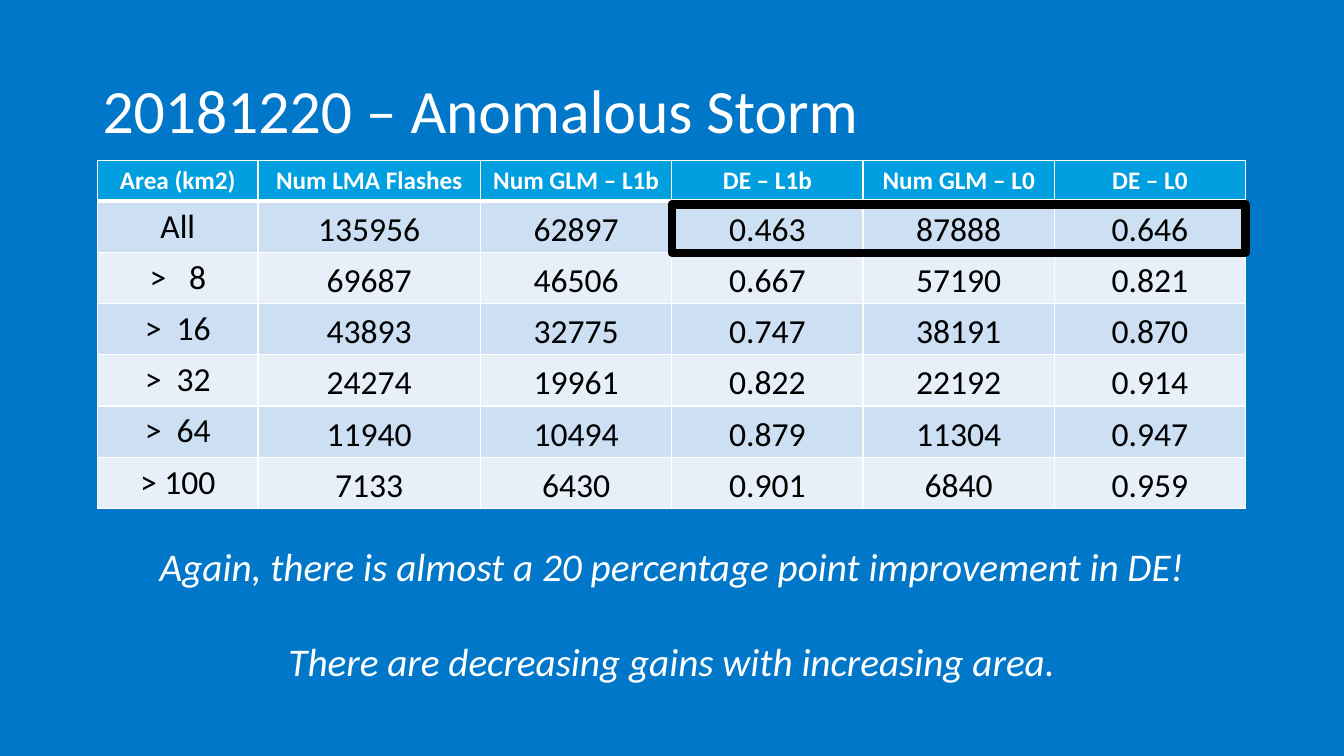
from lxml import etree
from pptx import Presentation
from pptx.dml.color import RGBColor
from pptx.enum.shapes import MSO_SHAPE
from pptx.enum.text import MSO_ANCHOR, PP_ALIGN
from pptx.oxml.ns import qn
from pptx.util import Cm, Pt

LEFT, CENTER = PP_ALIGN.LEFT, PP_ALIGN.CENTER
TOP, MIDDLE, BOTTOM = MSO_ANCHOR.TOP, MSO_ANCHOR.MIDDLE, MSO_ANCHOR.BOTTOM
RECTANGLE = MSO_SHAPE.RECTANGLE

BLUE = RGBColor(0x00, 0x77, 0xC8)
HEADER_BLUE = RGBColor(0x00, 0x9F, 0xDF)
BAND_DARK = RGBColor(0xCC, 0xDF, 0xF3)
BAND_LIGHT = RGBColor(0xE7, 0xF0, 0xF9)
WHITE = RGBColor(0xFF, 0xFF, 0xFF)
BLACK = RGBColor(0x00, 0x00, 0x00)

FONT = "Calibri"
TITLE_ONLY = 5
COL_WIDTHS = [4.04, 5.61] + [4.82] * 4
HEADER_HEIGHT, ROW_HEIGHT = 1.03, 1.29

HEADERS = ["Area (km2)", "Num LMA Flashes", "Num GLM – L1b",
           "DE – L1b", "Num GLM – L0", "DE – L0"]
FLASHES = [
    ("All", "135956", "62897", "0.463", "87888", "0.646"),
    (8, "69687", "46506", "0.667", "57190", "0.821"),
    (16, "43893", "32775", "0.747", "38191", "0.870"),
    (32, "24274", "19961", "0.822", "22192", "0.914"),
    (64, "11940", "10494", "0.879", "11304", "0.947"),
    (100, "7133", "6430", "0.901", "6840", "0.959"),
]
REMARKS = ["Again, there is almost a 20 percentage point improvement in DE!",
           "There are decreasing gains with increasing area."]


def write(p, text, size, color=WHITE, bold=False, italic=False, align=CENTER):
    p.alignment = align
    r = p.add_run()
    r.text = text
    r.font.name, r.font.size = FONT, Pt(size)
    r.font.bold, r.font.italic = bold, italic
    r.font.color.rgb = color


def add_borders(cell, bottom):
    """Draw white 1 pt cell borders, with the bottom one as wide as given."""
    tcPr = cell._tc.get_or_add_tcPr()
    for side, width in (("L", 1), ("R", 1), ("T", 1), ("B", bottom)):
        ln = etree.SubElement(tcPr, qn(f"a:ln{side}"), w=str(Pt(width)))
        fill = etree.SubElement(ln, qn("a:solidFill"))
        etree.SubElement(fill, qn("a:srgbClr"), val=str(WHITE))


def format_cell(cell, text, fill, border=1, **font):
    add_borders(cell, border)
    cell.fill.solid()
    cell.fill.fore_color.rgb = fill
    write(cell.text_frame.paragraphs[0], text, **font)


def add_title(s, left, top, width, height):
    title = s.shapes.title
    title.left, title.top = Cm(left), Cm(top)
    title.width, title.height = Cm(width), Cm(height)
    tf = title.text_frame
    tf.vertical_anchor = MIDDLE
    p = tf.paragraphs[0]
    p.line_spacing = 0.9
    write(p, "20181220 – Anomalous Storm", 44, align=LEFT)


def add_flash_table(s, left, top):
    height = HEADER_HEIGHT + ROW_HEIGHT * len(FLASHES)
    table = s.shapes.add_table(len(FLASHES) + 1, len(HEADERS), Cm(left), Cm(top),
                               Cm(sum(COL_WIDTHS)), Cm(height)).table
    for column, width in zip(table.columns, COL_WIDTHS):
        column.width = Cm(width)
    table.rows[0].height = Cm(HEADER_HEIGHT)
    for c, header in enumerate(HEADERS):
        format_cell(table.cell(0, c), header, HEADER_BLUE, border=3, size=18, bold=True)

    for r, (area, *values) in enumerate(FLASHES, 1):
        table.rows[r].height = Cm(ROW_HEIGHT)
        band = BAND_DARK if r % 2 else BAND_LIGHT
        label = area if area == "All" else f"> {area:>3}"
        for c, text in enumerate([label, *values]):
            cell = table.cell(r, c)
            format_cell(cell, text, band, size=24, color=BLACK)
            if c:
                cell.vertical_anchor = BOTTOM
                cell.margin_left = cell.margin_right = Cm(0.08)
                cell.margin_top = cell.margin_bottom = Cm(0.05)

    add_highlight(s, left + sum(COL_WIDTHS[:3]), top + HEADER_HEIGHT + 0.08,
                  sum(COL_WIDTHS[3:]), ROW_HEIGHT - 0.07)


def add_highlight(s, left, top, width, height):
    frame = s.shapes.add_shape(RECTANGLE, Cm(left), Cm(top), Cm(width), Cm(height))
    frame.shadow.inherit = False
    frame.fill.background()
    frame.line.color.rgb = BLACK
    frame.line.width = Pt(6)


def add_remarks(s, left, top, width, height):
    tf = s.shapes.add_textbox(Cm(left), Cm(top), Cm(width), Cm(height)).text_frame
    tf.word_wrap = True
    tf.vertical_anchor = TOP
    for i, remark in enumerate(REMARKS):
        p = tf.add_paragraph() if i else tf.paragraphs[0]
        p.space_before = Pt(34 * i)
        write(p, remark, 28, italic=True)


def main():
    prs = Presentation()
    prs.slide_width, prs.slide_height = Cm(33.87), Cm(19.05)
    s = prs.slides.add_slide(prs.slide_layouts[TITLE_ONLY])
    s.background.fill.solid()
    s.background.fill.fore_color.rgb = BLUE
    add_title(s, 2.33, 1.01, 29.21, 3.68)
    add_flash_table(s, 2.46, 4.04)
    add_remarks(s, 2.46, 13.54, sum(COL_WIDTHS), 3.84)
    prs.save("out.pptx")


if __name__ == "__main__":
    main()
